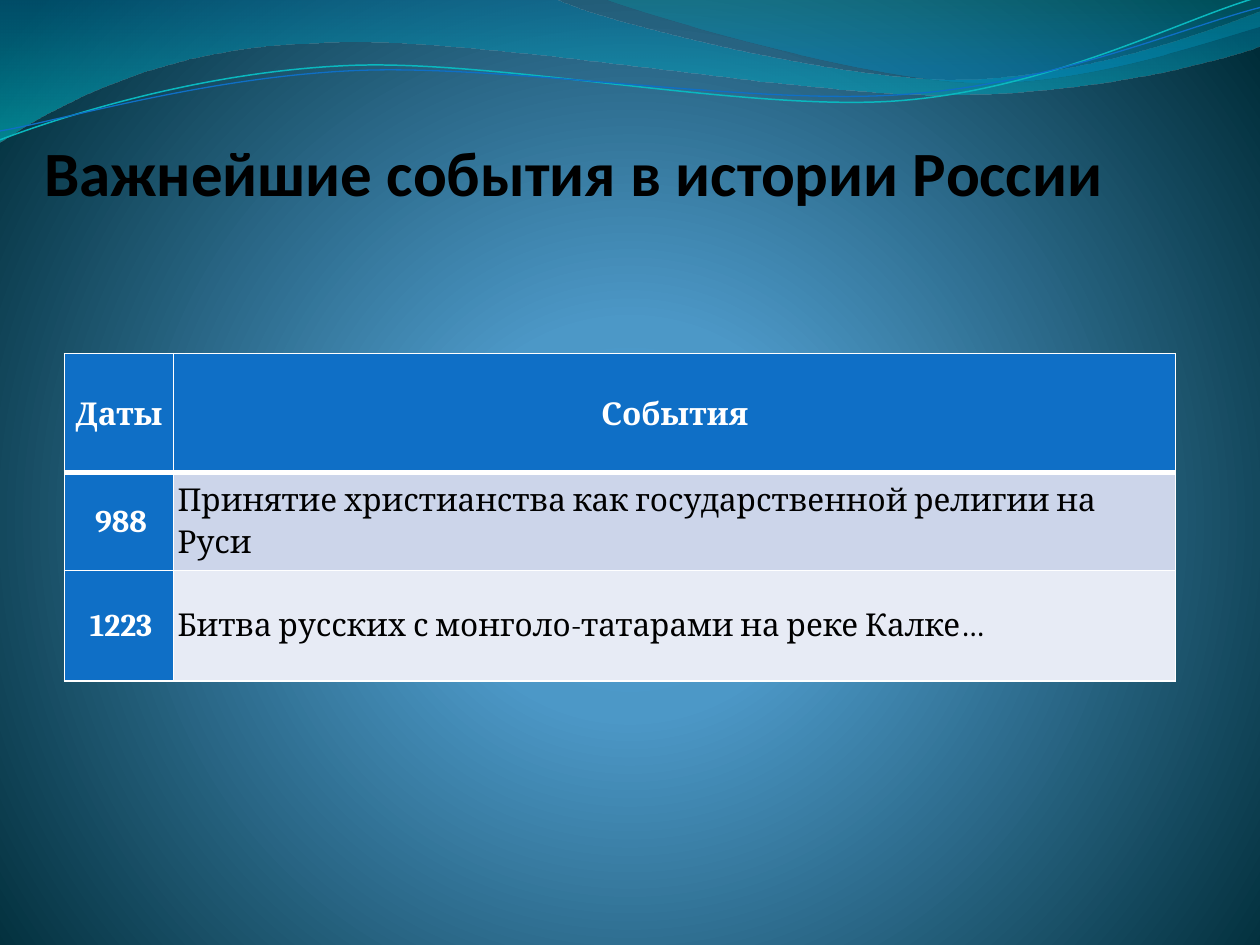
from copy import deepcopy
from math import cos, radians, sin

from pptx import Presentation, oxml
from pptx.dml.color import RGBColor
from pptx.enum import text
from pptx.oxml import ns
from pptx.util import Cm, Pt

HUES = {"ink": "000000", "white": "FFFFFF", "blue": "0F6FC6", "aqua": "0AB8BF",
        "band": "CCD5EA", "pale": "E7EBF5", "glow": "4AA0D6", "sky": "4C98C7",
        "night": "002C38", "sea": "0074A1", "teal": "00C6CF", "green": "00A1A9",
        "azure": "008BBF"}
DOWN = '<a:lin ang="5400000" scaled="1"/>'
ROUND = ('<a:path path="circle"><a:fillToRect l="10000" t="110000" '
         'r="10000" b="100000"/></a:path>')
TILT = 2.7
WAVES = [
    ([[(0, 0)], [(4.4, -.01)],
      [(4.76, .17), (6.64, .63), (7.58, .63)], [(8.53, .63), (9.58, .26), (10, .09)],
      [(10.01, .36)],
      [(9.83, .44), (8.7, .76), (7.46, .75)], [(6.22, .75), (3.82, .28), (2.57, .34)],
      [(1.29, .36), (.46, .83), (-.01, 1.13)]],
     [(0, "sea", 45), (100, "teal", 55)]),
    ([[(4.79, -.01)],
      [(5.09, .11), (6.82, .62), (7.69, .65)], [(8.56, .69), (9.61, .32), (10, .21)],
      [(10, 0)]],
     [(0, "green", 30), (80, "azure", 45)]),
]
LINES = [
    ([[(0, 1.11)], [(.48, .93), (1.58, .57), (2.77, .52)],
      [(3.95, .47), (5.93, .89), (7.13, .8)], [(8.33, .71), (9.38, .15), (9.98, -.02)]],
     (4.99, .57), "aqua", .85),
    ([[(0, 1.04)], [(.47, .96), (1.64, .61), (2.83, .56)],
      [(4.03, .51), (5.97, .84), (7.17, .75)], [(8.36, .67), (9.41, .21), (10, .06)]],
     (5, .59), "blue", .75),
]
ROWS = [("Даты", "События"),
        ("988", "Принятие христианства как государственной религии на Руси"),
        ("1223", "Битва русских с монголо-татарами на реке Калке…")]


def hue(name):
    """Return the named colour."""
    return RGBColor.from_string(HUES[name])


def blend(part, root, stops, way):
    """Give a part a gradient of (place, colour, opacity) stops."""
    part.fill.background()
    marks = "".join(
        f'<a:gs pos="{at * 1000}"><a:srgbClr val="{HUES[name]}">'
        f'<a:alpha val="{alpha * 1000}"/></a:srgbClr></a:gs>'
        for at, name, alpha in stops)
    old = root.xpath(".//a:noFill")[0]
    old.getparent().replace(old, oxml.parse_xml(
        f'<a:gradFill {ns.nsdecls("a")} rotWithShape="1">'
        f'<a:gsLst>{marks}</a:gsLst>{way}</a:gradFill>'))


def spin(dot, hub):
    """Turn a point clockwise about a hub by the tilt."""
    x, y, turn = dot[0] - hub[0], dot[1] - hub[1], radians(TILT)
    return (hub[0] + x * cos(turn) - y * sin(turn),
            hub[1] + x * sin(turn) + y * cos(turn))


def curve(slide, box, steps, close):
    """Draw straight and Bezier steps in tenths of the box width."""
    left, top, width = box
    steps = [[(Cm(left + x * width / 10), Cm(top + y * width / 10)) for x, y in step]
             for step in steps]
    pen = slide.shapes.build_freeform(*steps[0][0])
    pen.add_line_segments([step[-1] for step in steps[1:]], close=close)
    shape = pen.convert_to_shape()
    shape.shadow.inherit = False
    for step, old in zip(steps[1:], shape.element.xpath(".//a:lnTo")):
        if len(step) == 3:
            dots = "".join(f'<a:pt x="{x - shape.left}" y="{y - shape.top}"/>'
                           for x, y in step)
            old.getparent().replace(old, oxml.parse_xml(
                f'<a:cubicBezTo {ns.nsdecls("a")}>{dots}</a:cubicBezTo>'))
    return shape


def crest(slide, box):
    """Draw the waves and thin lines along the top."""
    for steps, stops in WAVES:
        shape = curve(slide, box, steps, True)
        shape.line.fill.background()
        blend(shape, shape.element, stops, DOWN)
    for steps, hub, name, width in LINES:
        flat = [[spin(dot, hub) for dot in step] for step in steps]
        shape = curve(slide, box, flat, False)
        shape.rotation = -TILT
        shape.fill.background()
        shape.line.color.rgb = hue(name)
        shape.line.width = Pt(width)


def style(para, face, size, name, bold):
    """Format the runs of a paragraph."""
    for run in para.runs:
        font = run.font
        font.name, font.size, font.bold = face, Pt(size), bold
        font.color.rgb = hue(name)


def title(slide, box):
    """Place the heading, which ends in a line break."""
    frame = slide.shapes.add_textbox(*map(Cm, box)).text_frame
    frame.word_wrap = True
    frame.vertical_anchor = text.MSO_ANCHOR.BOTTOM
    frame.margin_left = frame.margin_top = frame.margin_bottom = 0
    frame.margin_right = Cm(.05)
    frame.text = "Важнейшие события в истории России\v"
    para = frame.paragraphs[0]
    style(para, "Calibri", 36, "ink", True)
    look = para.runs[0].font._element
    para._p.xpath("a:br")[0].append(deepcopy(look))
    para._p.append(oxml.parse_xml(
        f'<a:endParaRPr {ns.nsdecls("a")} sz="3600" b="1">'
        '<a:latin typeface="Calibri"/></a:endParaRPr>'))


def edge(cell, row):
    """Draw white borders, thick below the header."""
    widths = {"L": 1, "R": 1, "T": 3 if row == 1 else 1, "B": 3 if row == 0 else 1}
    for side, width in widths.items():
        cell._tc.get_or_add_tcPr().append(oxml.parse_xml(
            f'<a:ln{side} {ns.nsdecls("a")} w="{Pt(width)}"><a:solidFill>'
            f'<a:srgbClr val="{HUES["white"]}"/></a:solidFill></a:ln{side}>'))


def events(slide, box):
    """Place the table of dates and events."""
    grid = slide.shapes.add_table(len(ROWS), 2, *map(Cm, box)).table
    for col, width in zip(grid.columns, (2.2, box[2] - 2.2)):
        col.width = Cm(width)
    for row, height in zip(grid.rows, (2.39, 1.98, 2.23)):
        row.height = Cm(height)
    for i, row in enumerate(ROWS):
        for j, words in enumerate(row):
            cell, body = grid.cell(i, j), i > 0 and j > 0
            cell.vertical_anchor = text.MSO_ANCHOR.MIDDLE
            cell.margin_left = cell.margin_bottom = Cm(.08 if i else 0)
            cell.margin_right = Cm(.08 if body else 0)
            cell.margin_top = 0
            edge(cell, i)
            cell.fill.solid()
            cell.fill.fore_color.rgb = hue(("band", "pale")[i - 1] if body else "blue")
            cell.text_frame.text = words
            para = cell.text_frame.paragraphs[0]
            para.alignment = text.PP_ALIGN.LEFT if body else text.PP_ALIGN.CENTER
            para.line_spacing, para.space_after = 1.15, Pt(7.5)
            style(para, "Cambria", 18, "ink" if body else "white", not body)


def main():
    """Build and save the slide."""
    deck = Presentation()
    deck.slide_width, deck.slide_height = Cm(25.4), Cm(19.05)
    slide = deck.slides.add_slide(deck.slide_layouts[6])
    blend(slide.background, slide.element,
          [(0, "glow", 100), (25, "sky", 100), (100, "night", 100)], ROUND)
    crest(slide, (0, 0, 25.4))
    title(slide, (.89, 1.93, 23.4, 3.81))
    events(slide, (1.3, 7.13, 22.4, 6.6))
    deck.save("out.pptx")


if __name__ == "__main__":
    main()
